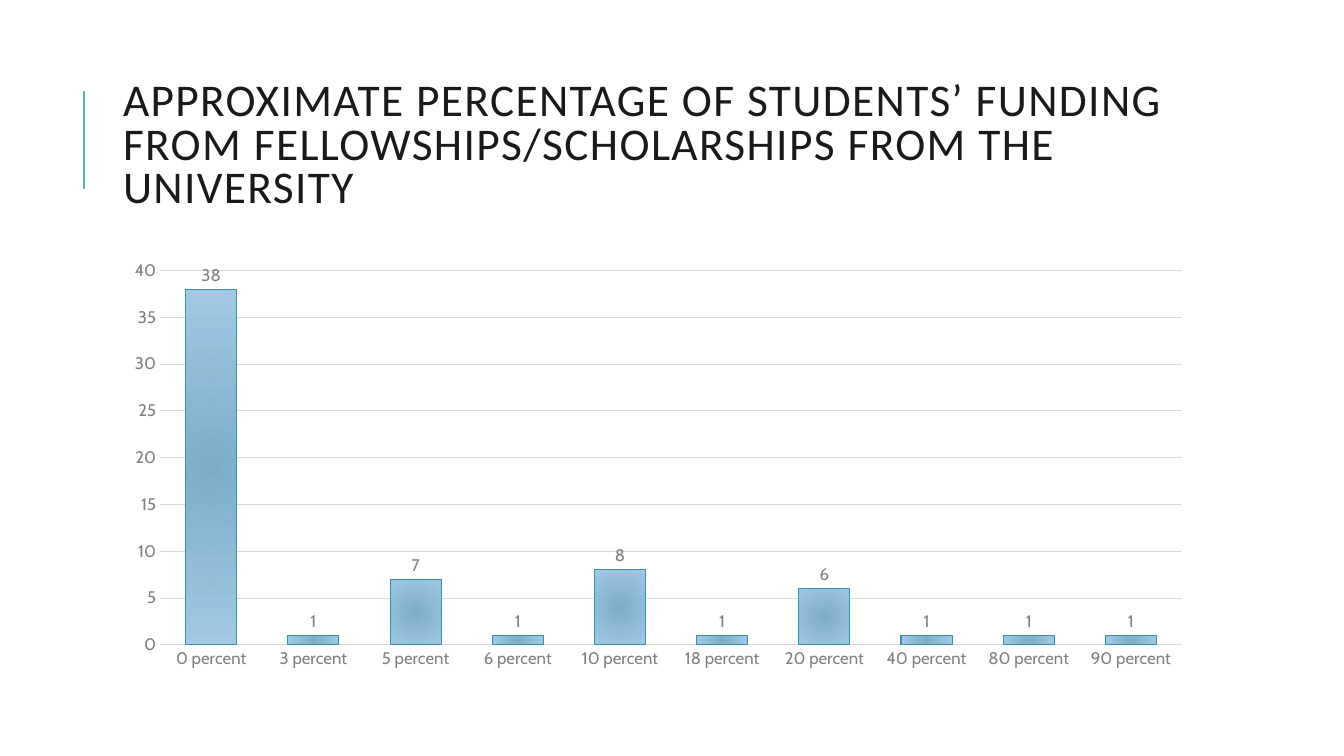
import pptx
import pptx.chart.data
import pptx.dml.color
import pptx.enum.chart
import pptx.enum.shapes
import pptx.enum.text
import pptx.oxml
import pptx.oxml.ns
import pptx.util

WIDTH, HEIGHT = 13.33, 7.5
FUNDING_COUNTS = {0: 38, 3: 1, 5: 7, 6: 1, 10: 8, 18: 1, 20: 6, 40: 1, 80: 1, 90: 1}


def rgb(hex_colour):
    return pptx.dml.color.RGBColor.from_string(hex_colour)


class FundingSlide:
    """Style and current slide; positions are shares of the slide's size."""
    heading_font, chart_font = "Calibri", "Cabin"
    ink, grey, rule, accent = "1A1A1A", "808080", "D9D9D9", "58B6C0"
    bar_centre, bar_edge, bar_outline = "7CADC8", "A1C9E3", "3391B6"

    def __init__(self, deck):
        self.slide = deck.slides.add_slide(deck.slide_layouts[5])

    def place(self, *shares):
        return [pptx.util.Inches(share * side)
                for share, side in zip(shares, (WIDTH, HEIGHT) * 2)]

    def style_line(self, line, colour, points=0.75):
        line.color.rgb = rgb(colour)
        line.width = pptx.util.Pt(points)

    def style_font(self, font, name, size, colour):
        font.name = name
        font.size = pptx.util.Pt(size)
        font.color.rgb = rgb(colour)

    def accent_line(self, *shares):
        accent = self.slide.shapes.add_connector(
            pptx.enum.shapes.MSO_CONNECTOR.STRAIGHT, *self.place(*shares))
        self.style_line(accent.line, self.accent, 1.5)
        accent._element.spPr.append(pptx.oxml.parse_xml(
            f"<a:effectLst {pptx.oxml.ns.nsdecls('a')}/>"))

    def title(self, wording, *shares):
        heading = self.slide.shapes.title
        heading.left, heading.top, heading.width, heading.height = self.place(*shares)
        frame = heading.text_frame
        frame.text = wording
        frame.word_wrap = True
        frame.auto_size = pptx.enum.text.MSO_AUTO_SIZE.NONE
        frame.vertical_anchor = pptx.enum.text.MSO_ANCHOR.MIDDLE
        line = frame.paragraphs[0]
        line.alignment = pptx.enum.text.PP_ALIGN.LEFT
        line.line_spacing = 0.8
        for run in line.runs:
            self.style_font(run.font, self.heading_font, 32.4, self.ink)
            run.font._element.set("spc", "100")

    def radial_fill(self, bars):
        fill = bars.format.fill
        fill.gradient()
        for stop, colour in zip(fill.gradient_stops, (self.bar_centre, self.bar_edge)):
            stop.color.rgb = rgb(colour)
        # Swap the linear direction for a circle around the middle
        linear = bars._element.find(".//" + pptx.oxml.ns.qn("a:lin"))
        linear.getparent().replace(linear, pptx.oxml.parse_xml(
            f'<a:path {pptx.oxml.ns.nsdecls("a")} path="circle">'
            '<a:fillToRect l="50000" t="50000" r="50000" b="50000"/></a:path>'))

    def column_chart(self, counts, *shares):
        funding = pptx.chart.data.CategoryChartData()
        funding.categories = [f"{percent} percent" for percent in counts]
        funding.add_series("Series 1", list(counts.values()))
        chart = self.slide.shapes.add_chart(
            pptx.enum.chart.XL_CHART_TYPE.COLUMN_CLUSTERED,
            *self.place(*shares), funding).chart
        chart.has_legend = chart.has_title = False
        self.style_font(chart.font, self.chart_font, 12, self.grey)

        # Axes and gridlines
        percents, students = chart.category_axis, chart.value_axis
        for axis in (percents, students):
            axis.major_tick_mark = axis.minor_tick_mark = pptx.enum.chart.XL_TICK_MARK.NONE
            self.style_font(axis.tick_labels.font, self.chart_font, 12, self.grey)
        self.style_line(percents.format.line, self.rule)
        students.format.line.fill.background()
        students.minimum_scale, students.maximum_scale, students.major_unit = 0, 40, 5
        students.has_major_gridlines = True
        self.style_line(students.major_gridlines.format.line, self.rule)

        # Bars and their values
        plot = chart.plots[0]
        plot.gap_width, plot.overlap, plot.vary_by_categories = 100, -24, False
        bars = plot.series[0]
        self.radial_fill(bars)
        self.style_line(bars.format.line, self.bar_outline)
        labels = bars.data_labels
        labels.show_value = True
        labels.position = pptx.enum.chart.XL_LABEL_POSITION.OUTSIDE_END
        self.style_font(labels.font, self.chart_font, 12, self.grey)


def main():
    deck = pptx.Presentation()
    deck.slide_width = pptx.util.Inches(WIDTH)
    deck.slide_height = pptx.util.Inches(HEIGHT)
    page = FundingSlide(deck)
    left = 1.12 / WIDTH

    # Heading with its accent line
    page.accent_line(1 / 16, 0.25, 1 / 16, 0.12)
    page.title("APPROXIMATE PERCENTAGE OF STUDENTS’ FUNDING FROM "
               "FELLOWSHIPS/SCHOLARSHIPS FROM THE UNIVERSITY",
               left, 0.64 / HEIGHT, 10.63 / WIDTH, 1.64 / HEIGHT)

    # Students per share of funding
    page.column_chart(FUNDING_COUNTS, left, 1 / 3, 10.82 / WIDTH, 4.22 / HEIGHT)
    deck.save("out.pptx")


if __name__ == "__main__":
    main()
